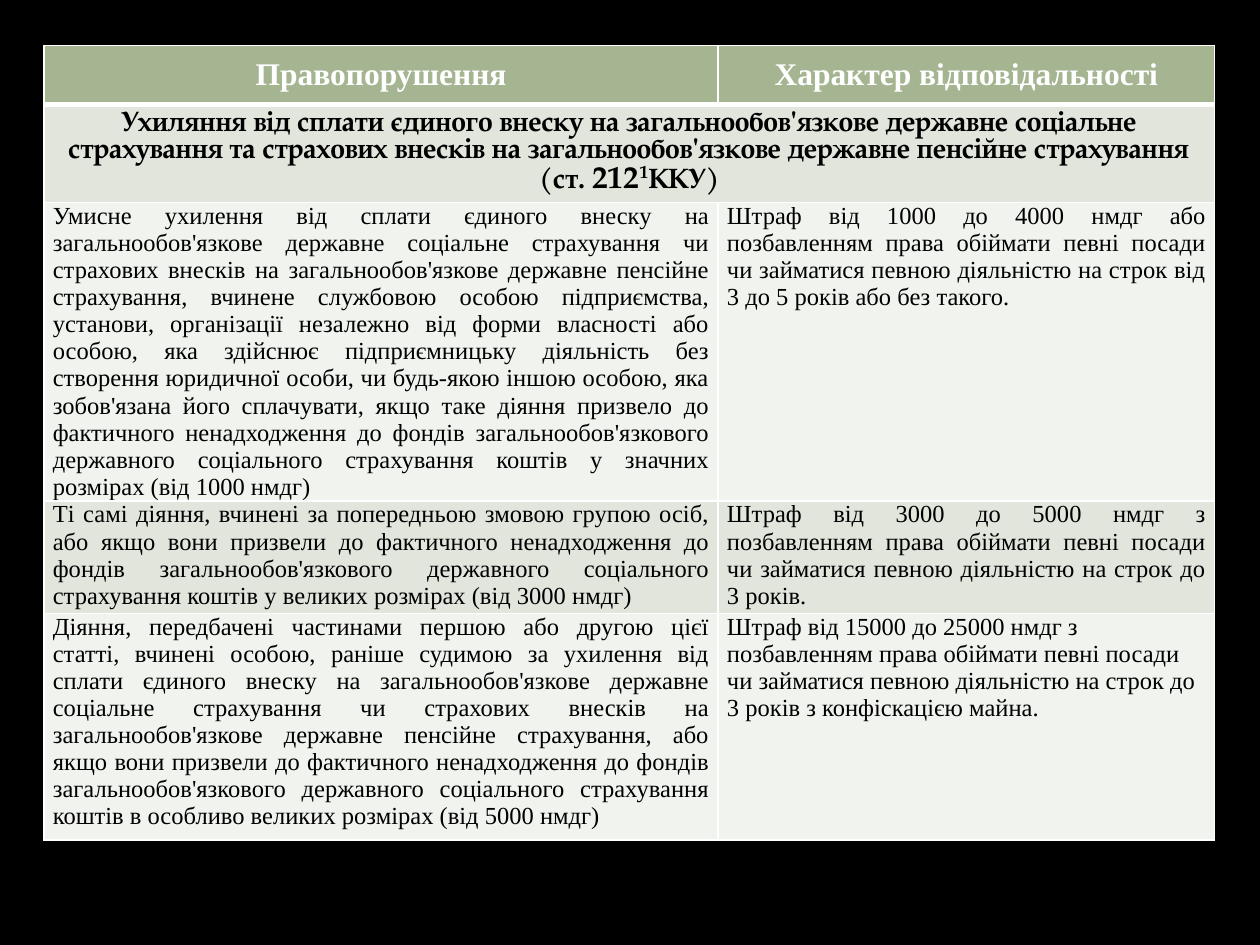
from pptx import Presentation
from pptx import util as u
from pptx.dml.color import RGBColor
from pptx.enum import text
from pptx.oxml import parse_xml
from pptx.oxml.ns import nsdecls

SERIF, PAGELLA = "Times New Roman", "TeX Gyre Pagella"
CENTER, JUSTIFY, LEFT = text.PP_ALIGN.CENTER, text.PP_ALIGN.JUSTIFY, text.PP_ALIGN.LEFT
HEADER, DARK, LIGHT = "A5B592", "E1E5DC", "F0F3EE"


def rgb(value):
    return RGBColor.from_string(value)


def fill_cell(cell, runs, align, fill, color, bold, borders):
    """Style a cell; runs are (text, size, font), borders are L, R, T, B widths."""
    tcPr = cell._tc.get_or_add_tcPr()
    for side, width in zip("LRTB", borders):
        tcPr.append(parse_xml(
            f'<a:ln{side} {nsdecls("a")} w="{u.Pt(width)}"><a:solidFill>'
            f'<a:srgbClr val="FFFFFF"/></a:solidFill></a:ln{side}>'))
    cell.fill.solid()
    cell.fill.fore_color.rgb = rgb(fill)
    p = cell.text_frame.paragraphs[0]
    p.alignment = align
    for content, size, font in runs:
        r = p.add_run()
        r.text = content
        r.font.size, r.font.name, r.font.bold = u.Pt(size), font, bold
        r.font.color.rgb = rgb(color)


header = ["Правопорушення", "Характер відповідальності"]
article = [
    ("Ухиляння від сплати єдиного внеску на загальнообов'язкове державне соціальне "
     "страхування та страхових внесків на загальнообов'язкове державне пенсійне "
     "страхування (ст. ", 16, PAGELLA),
    ("212", 18, PAGELLA),
    ("1", 18, PAGELLA),
    ("ККУ)", 16, PAGELLA),
]
offences = [
    ("Умисне ухилення від сплати єдиного внеску на загальнообов'язкове державне "
     "соціальне страхування чи страхових внесків на загальнообов'язкове державне "
     "пенсійне страхування, вчинене службовою особою підприємства, установи, "
     "організації незалежно від форми власності або особою, яка здійснює "
     "підприємницьку діяльність без створення юридичної особи, чи будь-якою іншою "
     "особою, яка зобов'язана його сплачувати, якщо таке діяння призвело до "
     "фактичного ненадходження до фондів загальнообов'язкового державного "
     "соціального страхування коштів у значних розмірах (від 1000 нмдг)",
     "Штраф від 1000 до 4000 нмдг або позбавленням права обіймати певні посади чи "
     "займатися певною діяльністю на строк від 3 до 5 років або без такого."),
    ("Ті самі діяння, вчинені за попередньою змовою групою осіб, або якщо вони "
     "призвели до фактичного ненадходження до фондів загальнообов'язкового "
     "державного соціального страхування коштів у великих розмірах (від 3000 нмдг)",
     "Штраф від 3000 до 5000 нмдг з позбавленням права обіймати певні посади чи "
     "займатися певною діяльністю на строк до 3 років."),
    ("Діяння, передбачені частинами першою або другою цієї статті, вчинені особою, "
     "раніше судимою за ухилення від сплати єдиного внеску на загальнообов'язкове "
     "державне соціальне страхування чи страхових внесків на загальнообов'язкове "
     "державне пенсійне страхування, або якщо вони призвели до фактичного "
     "ненадходження до фондів загальнообов'язкового державного соціального "
     "страхування коштів в особливо великих розмірах (від 5000 нмдг)",
     "Штраф від 15000 до 25000 нмдг з позбавленням права обіймати певні посади чи "
     "займатися певною діяльністю на строк до 3 років з конфіскацією майна."),
]

prs = Presentation()
prs.slide_width, prs.slide_height = u.Inches(10), u.Inches(7.5)
s = prs.slides.add_slide(prs.slide_layouts[6])
s.background.fill.solid()
s.background.fill.fore_color.rgb = rgb("000000")

widths = [5.35, 3.94]
heights = [0.47, 0.77, 2.37, 0.89, 1.8]
table = s.shapes.add_table(len(heights), len(widths), u.Inches(0.35), u.Inches(0.36),
                           u.Inches(sum(widths)), u.Inches(sum(heights))).table
for column, width in zip(table.columns, widths):
    column.width = u.Inches(width)
for row, height in zip(table.rows, heights):
    row.height = u.Inches(height)

for col, title in enumerate(header):
    cell = table.cell(0, col)
    fill_cell(cell, [(title, 18, SERIF)], CENTER, HEADER, "FFFFFF", True, (1, 1, 1, 3))
    cell.vertical_anchor = text.MSO_ANCHOR.MIDDLE

band = table.cell(1, 0)
band.merge(table.cell(1, 1))
fill_cell(band, article, CENTER, DARK, "000000", True, (1, 1, 3, 1))
band.vertical_anchor = text.MSO_ANCHOR.MIDDLE
superscript = band.text_frame.paragraphs[0].runs[2]
superscript.font._element.set("baseline", "30000")

for row, pair in enumerate(offences, start=2):
    for col, content in enumerate(pair):
        align = LEFT if (row, col) == (4, 1) else JUSTIFY
        fill_cell(table.cell(row, col), [(content, 14, SERIF)], align,
                  DARK if row % 2 else LIGHT, "000000", False, (1, 1, 1, 1))

for cell in table.iter_cells():
    if not cell.is_merge_origin and not cell.is_spanned:
        cell.margin_left = cell.margin_right = u.Inches(0.07)
        cell.margin_top = cell.margin_bottom = 0

prs.save("out.pptx")
